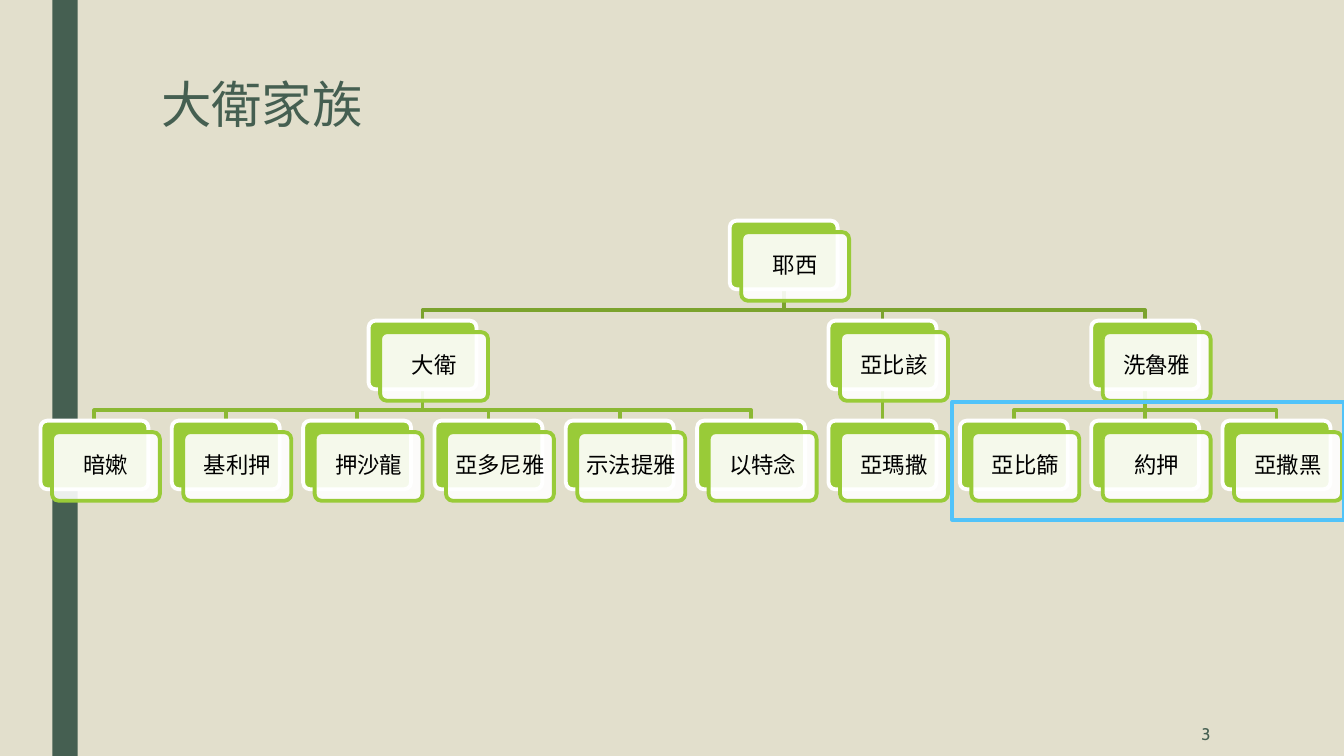
import itertools

import pptx
import pptx.dml.color
import pptx.enum.shapes
import pptx.enum.text
import pptx.oxml
import pptx.oxml.ns
import pptx.util
from pptx.util import Cm

COLOURS = {
    "background": "E2DFCC",
    "forest": "455F51",
    "leaf": "99CB38",
    "sons_branch": "7BA32D",
    "grandsons_branch": "8BB833",
    "card": "FFFFFF",
    "name": "000000",
    "highlight": "51C3F9",
}
BRANCH_COLOURS = ["sons_branch", "grandsons_branch"]
FAMILY = {
    "耶西": {
        "大衛": dict.fromkeys(
            ["暗嫰", "基利押", "押沙龍", "亞多尼雅", "示法提雅", "以特念"], {}
        ),
        "亞比該": {"亞瑪撒": {}},
        "洗魯雅": dict.fromkeys(["亞比篩", "約押", "亞撒黑"], {}),
    }
}
FIRST_CENTRE, PERSON_STEP = 2.38, 3.31
FIRST_TOP, GENERATION_STEP = 5.56, 2.52
CARD_WIDTH, CARD_HEIGHT = 2.72, 1.73
CARD_SHIFT = 0.29
BRANCH_DROP = 0.53
LINE_WIDTH = 2.75
RECTANGLE = pptx.enum.shapes.MSO_SHAPE.RECTANGLE
ROUNDED = pptx.enum.shapes.MSO_SHAPE.ROUNDED_RECTANGLE
ALIGN = pptx.enum.text.PP_ALIGN
ANCHOR = pptx.enum.text.MSO_ANCHOR


def set_attributes(target, values):
    for attribute, value in values.items():
        setattr(target, attribute, value)


def colour(key):
    return pptx.dml.color.RGBColor.from_string(COLOURS[key])


def paint_line(line, key):
    line.color.rgb = colour(key)
    line.width = pptx.util.Pt(LINE_WIDTH)


def add_block(slide, preset, box, fill=None, outline=None):
    block = slide.shapes.add_shape(preset, *map(Cm, box))
    block.shadow.inherit = False
    if fill:
        block.fill.solid()
        block.fill.fore_color.rgb = colour(fill)
    else:
        block.fill.background()
    if outline:
        paint_line(block.line, outline)
    else:
        block.line.fill.background()
    return block


def write_text(frame, wording, font, frame_format, paragraph_format):
    set_attributes(frame, {"word_wrap": True, **frame_format})
    paragraph = frame.paragraphs[0]
    set_attributes(paragraph, paragraph_format)
    run = paragraph.add_run()
    run.text = wording
    family, size, key = font
    set_attributes(run.font, {"name": family, "size": pptx.util.Pt(size)})
    run.font.color.rgb = colour(key)


def add_label(slide, box, *text_settings):
    label = slide.shapes.add_textbox(*map(Cm, box))
    write_text(label.text_frame, *text_settings)


def make_translucent(card, percent):
    shade = card.fill._xPr.find(".//" + pptx.oxml.ns.qn("a:srgbClr"))
    alpha = pptx.oxml.parse_xml(
        f'<a:alpha {pptx.oxml.ns.nsdecls("a")} val="{percent * 1000}"/>'
    )
    shade.append(alpha)


def add_person(slide, name, centre, top):
    left = centre - CARD_WIDTH / 2
    back = add_block(
        slide, ROUNDED, (left, top, CARD_WIDTH, CARD_HEIGHT), "leaf", "card"
    )
    front = add_block(
        slide,
        ROUNDED,
        (left + CARD_SHIFT, top + CARD_SHIFT, CARD_WIDTH, CARD_HEIGHT),
        "card",
        "leaf",
    )
    for card in (back, front):
        card.adjustments[0] = 0.1
    make_translucent(front, 90)
    sides = ("left", "top", "right", "bottom")
    write_text(
        front.text_frame,
        name,
        ("Cabin", 16, "name"),
        {
            "vertical_anchor": ANCHOR.MIDDLE,
            **{f"margin_{side}": Cm(0.15) for side in sides},
        },
        {"alignment": ALIGN.CENTER, "line_spacing": 0.9},
    )


def add_branch(slide, parent, child, generation):
    start = generation_top(generation) + CARD_HEIGHT
    end = generation_top(generation + 1)
    if parent == child:
        branch = slide.shapes.add_connector(
            pptx.enum.shapes.MSO_CONNECTOR.STRAIGHT,
            *map(Cm, (parent, start, child, end)),
        )
        branch._element.spPr.append(
            pptx.oxml.parse_xml(f'<a:effectLst {pptx.oxml.ns.nsdecls("a")}/>')
        )
    else:
        bend = start + BRANCH_DROP
        corners = [(parent, bend), (child, bend), (child, end)]
        outline = slide.shapes.build_freeform(Cm(parent), Cm(start))
        outline.add_line_segments(
            [(Cm(x), Cm(y)) for x, y in corners], close=False
        )
        branch = outline.convert_to_shape()
        branch.shadow.inherit = False
        branch.fill.background()
    paint_line(branch.line, BRANCH_COLOURS[generation])


def generation_top(generation):
    return FIRST_TOP + generation * GENERATION_STEP


def arrange(family, generation, columns, people, branches):
    centres = []
    for name, children in family.items():
        below = arrange(children, generation + 1, columns, people, branches)
        if below:
            centre = (below[0] + below[-1]) / 2
        else:
            centre = FIRST_CENTRE + next(columns) * PERSON_STEP
        centre = round(centre, 2)
        people.append((name, centre, generation_top(generation)))
        branches.extend((centre, child, generation) for child in below)
        centres.append(centre)
    return centres


def add_family_tree(slide):
    people, branches = [], []
    arrange(FAMILY, 0, itertools.count(), people, branches)
    for branch in branches:
        add_branch(slide, *branch)
    for person in people:
        add_person(slide, *person)


def main():
    deck = pptx.Presentation()
    set_attributes(deck, {"slide_width": Cm(33.87), "slide_height": Cm(19.05)})
    slide = deck.slides.add_slide(deck.slide_layouts[6])
    slide.background.fill.solid()
    slide.background.fill.fore_color.rgb = colour("background")

    add_block(slide, RECTANGLE, (1.32, 0, 0.64, 19.05), "forest")
    add_label(
        slide,
        (3.81, 1.9, 27.2, 3.05),
        "大衛家族",
        ("Arial", 36, "forest"),
        {"vertical_anchor": ANCHOR.TOP},
        {"line_spacing": 0.89},
    )
    add_family_tree(slide)
    add_label(
        slide,
        (26.31, 17.93, 4.45, 1.12),
        "3",
        ("Cabin", 12, "forest"),
        {"vertical_anchor": ANCHOR.MIDDLE},
        {"alignment": ALIGN.RIGHT},
    )
    add_block(
        slide, RECTANGLE, (24, 10.13, 9.86, 2.97), outline="highlight"
    )
    deck.save("out.pptx")


if __name__ == "__main__":
    main()
